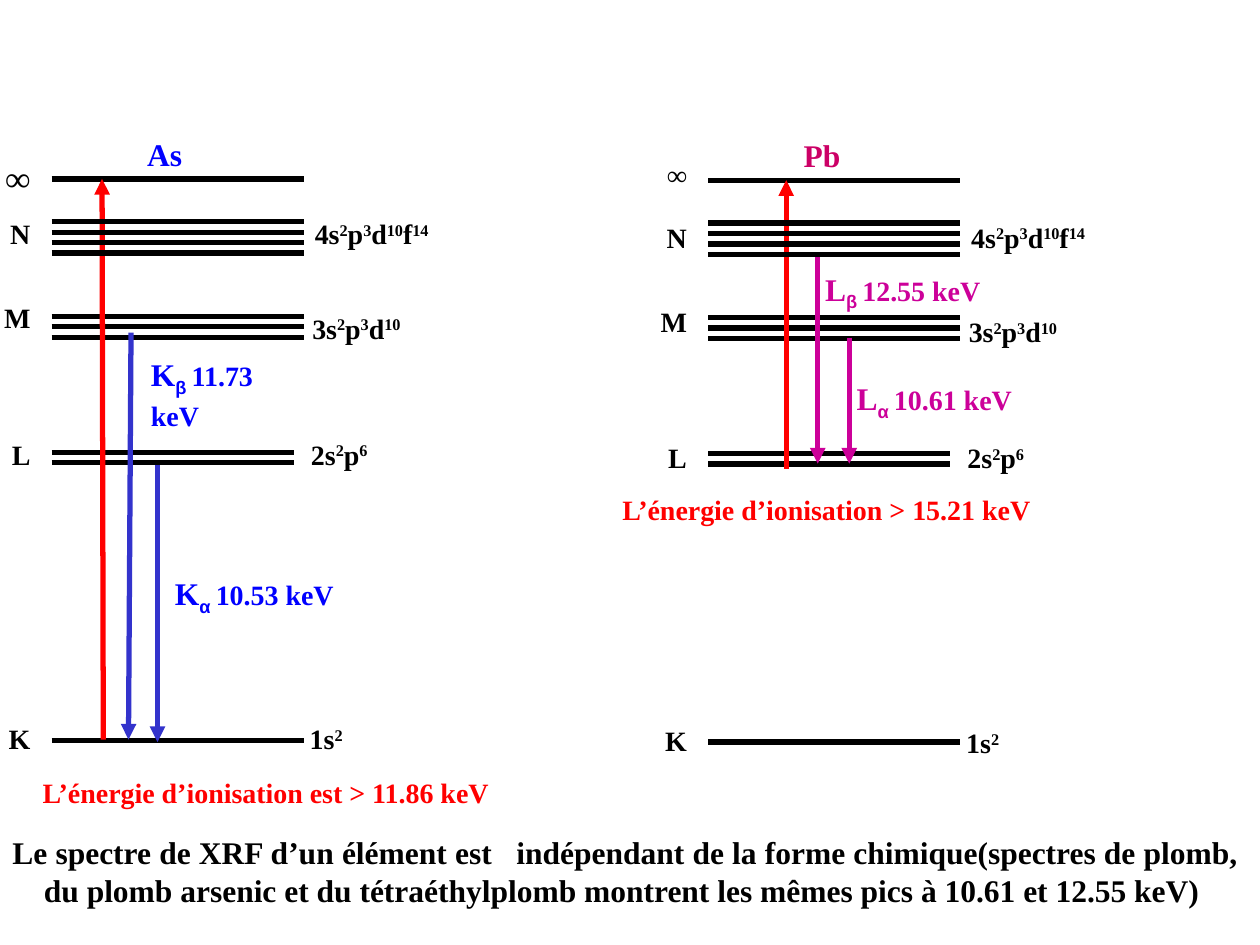
from dataclasses import dataclass

import lxml.etree
import pptx
import pptx.dml.color
import pptx.enum.shapes
import pptx.enum.text
import pptx.oxml.ns
import pptx.util

Inches = pptx.util.Inches
Align = pptx.enum.text.PP_ALIGN


@dataclass(frozen=True)
class Theme:
    font: str = "Times New Roman"
    greek_font: str = "Arial"
    ink: str = "000000"
    ionisation: str = "FF0000"
    k_arrow: str = "3333CC"
    arsenic: str = "0000FF"
    l_series: str = "CC0099"
    lead: str = "CC0066"
    small: int = 16
    large: int = 18
    infinity: int = 20
    line_width: float = 3


@dataclass(frozen=True)
class Box:
    left: float
    top: float
    width: float
    height: float

    def inner(self, left, top, width, height=0.37):
        return Box(self.left + left, self.top + top, width, height)


@dataclass(frozen=True)
class Shell:
    symbol: str
    top: float
    lines: int
    length: float
    symbol_top: float
    configuration: str = ""
    configuration_box: tuple = ()


THEME = Theme()
LINE_GAP = 0.083
SYMBOL_WIDTH = 0.41
SYMBOL_GAP = 0.07
INNER_SHELLS = [
    Shell("∞", 0, 1, 2, -0.23),
    Shell("M", 1.09, 3, 2, 0.92, "3s^2^p^3^d^10", (1.97, 1.0, 0.95)),
    Shell("L", 2.17, 2, 1.92, 2.0, "2s^2^p^6", (1.96, 2.0, 0.67)),
    Shell("K", 4.46, 1, 2, 4.26, "1s^2", (1.95, 4.26, 0.47)),
]
FRONT_SHELLS = [
    Shell("N", 0.34, 4, 2, 0.25, "4s^2^p^3^d^10^f^14", (1.99, 0.25, 1.18)),
]


def add_text(slide, box, text, *, size=THEME.small, color=THEME.ink,
             align=Align.LEFT, wrap=False, grow=True, hanging=0):
    shape = slide.shapes.add_textbox(
        *(Inches(value) for value in (box.left, box.top, box.width, box.height)))
    frame = shape.text_frame
    frame.word_wrap = wrap
    if grow:
        frame.auto_size = pptx.enum.text.MSO_AUTO_SIZE.SHAPE_TO_FIT_TEXT
    paragraph = frame.paragraphs[0]
    paragraph.alignment = align
    if hanging:
        properties = paragraph._p.get_or_add_pPr()
        properties.set("marL", str(Inches(hanging)))
        properties.set("indent", str(-Inches(hanging)))
    runs = [(text, {})] if isinstance(text, str) else text
    for words, style in runs:
        run = paragraph.add_run()
        run.text = words
        run.font.name = style.get("font", THEME.font)
        run.font.size = pptx.util.Pt(style.get("size", size))
        run.font.bold = True
        run.font.color.rgb = pptx.dml.color.RGBColor.from_string(color)
        if "baseline" in style:
            run.font._element.set("baseline", str(style["baseline"] * 1000))


def add_line(slide, start, end, color=THEME.ink, arrow=False):
    connector = slide.shapes.add_connector(
        pptx.enum.shapes.MSO_CONNECTOR.STRAIGHT,
        *(Inches(value) for value in (*start, *end)))
    connector.line.color.rgb = pptx.dml.color.RGBColor.from_string(color)
    connector.line.width = pptx.util.Pt(THEME.line_width)
    qualified = pptx.oxml.ns.qn
    if arrow:
        lxml.etree.SubElement(connector.line._get_or_add_ln(),
                              qualified("a:tailEnd"), type="triangle")
    lxml.etree.SubElement(connector._element.spPr, qualified("a:effectLst"))


def configuration_runs(text):
    return [(part, {"baseline": 30} if index % 2 else {})
            for index, part in enumerate(text.split("^"))]


def transition_runs(series, greek, energy):
    return [(series, {"size": THEME.large}),
            (greek + " ", {"size": THEME.large, "font": THEME.greek_font,
                           "baseline": -25}),
            (energy, {})]


def add_shells(slide, box, shells, label_shift, infinity_size):
    for shell in shells:
        for index in range(shell.lines):
            height = box.top + shell.top + index * LINE_GAP
            add_line(slide, (box.left, height),
                     (box.left + shell.length, height))
        size = infinity_size if shell.symbol == "∞" else THEME.small
        shift = 0 if shell.symbol in "∞K" else label_shift
        add_text(slide,
                 box.inner(-SYMBOL_WIDTH - SYMBOL_GAP,
                           shell.symbol_top + shift, SYMBOL_WIDTH),
                 shell.symbol, size=size, align=Align.RIGHT)
        if shell.configuration:
            left, top, width = shell.configuration_box
            add_text(slide, box.inner(left, top + label_shift, width),
                     configuration_runs(shell.configuration))


def add_element(slide, box, name, color, arrows, transitions, ionisation,
                label_shift=0, infinity_size=THEME.small):
    add_shells(slide, box, INNER_SHELLS, label_shift, infinity_size)
    for start_left, start_top, end_left, end_top, arrow_color in arrows:
        add_line(slide, (box.left + start_left, box.top + start_top),
                 (box.left + end_left, box.top + end_top), arrow_color, True)
    add_shells(slide, box, FRONT_SHELLS, label_shift, infinity_size)
    for place, runs, label_color, wrap in transitions:
        add_text(slide, box.inner(*place, 0.41), transition_runs(*runs),
                 color=label_color, wrap=wrap)
    add_text(slide, box.inner(0.66, -0.4, 0.67, 0.41), name,
             size=THEME.large, color=color, wrap=True)
    place, text = ionisation
    add_text(slide, box.inner(*place), text, color=THEME.ionisation)


def add_conclusion(slide, box):
    add_text(slide, box,
             "Le spectre de XRF d’un élément est   indépendant de la forme "
             "chimique(spectres de plomb, du plomb arsenic et du "
             "tétraéthylplomb montrent les mêmes pics à 10.61 et 12.55 keV)",
             size=THEME.large, align=Align.JUSTIFY, wrap=True, grow=False,
             hanging=0.25)


def main():
    presentation = pptx.Presentation()
    presentation.slide_width = Inches(10)
    presentation.slide_height = Inches(7.5)
    slide = presentation.slides.add_slide(presentation.slide_layouts[6])
    add_conclusion(slide, Box(0, 6.56, 9.93, 0.68))
    add_element(
        slide, Box(5.62, 1.43, 2, 4.46), "Pb", THEME.lead,
        arrows=[(0.62, 2.29, 0.62, 0, THEME.ionisation),
                (0.87, 0.58, 0.87, 2.25, THEME.l_series),
                (1.12, 1.25, 1.12, 2.25, THEME.l_series)],
        transitions=[
            ((0.83, 0.66, 1.45), ("L", "β", "12.55 keV"), THEME.l_series, False),
            ((1.08, 1.53, 1.45), ("L", "α", "10.61 keV"), THEME.l_series, False)],
        ionisation=((-0.78, 2.43, 3.48), "L’énergie d’ionisation > 15.21 keV"),
        label_shift=0.02)
    add_element(
        slide, Box(0.41, 1.42, 2, 4.46), "As", THEME.arsenic,
        arrows=[(0.41, 4.45, 0.4, 0, THEME.ionisation),
                (0.63, 1.22, 0.61, 4.45, THEME.k_arrow),
                (0.84, 2.27, 0.84, 4.47, THEME.k_arrow)],
        transitions=[
            ((0.69, 1.35, 1.3), ("K", "β", "11.73 keV"), THEME.arsenic, True),
            ((0.88, 3.09, 1.49), ("K", "α", "10.53 keV"), THEME.arsenic, False)],
        ionisation=((-0.17, 4.69, 3.82),
                    "L’énergie d’ionisation est > 11.86 keV"),
        infinity_size=THEME.infinity)
    presentation.save("out.pptx")


if __name__ == "__main__":
    main()
